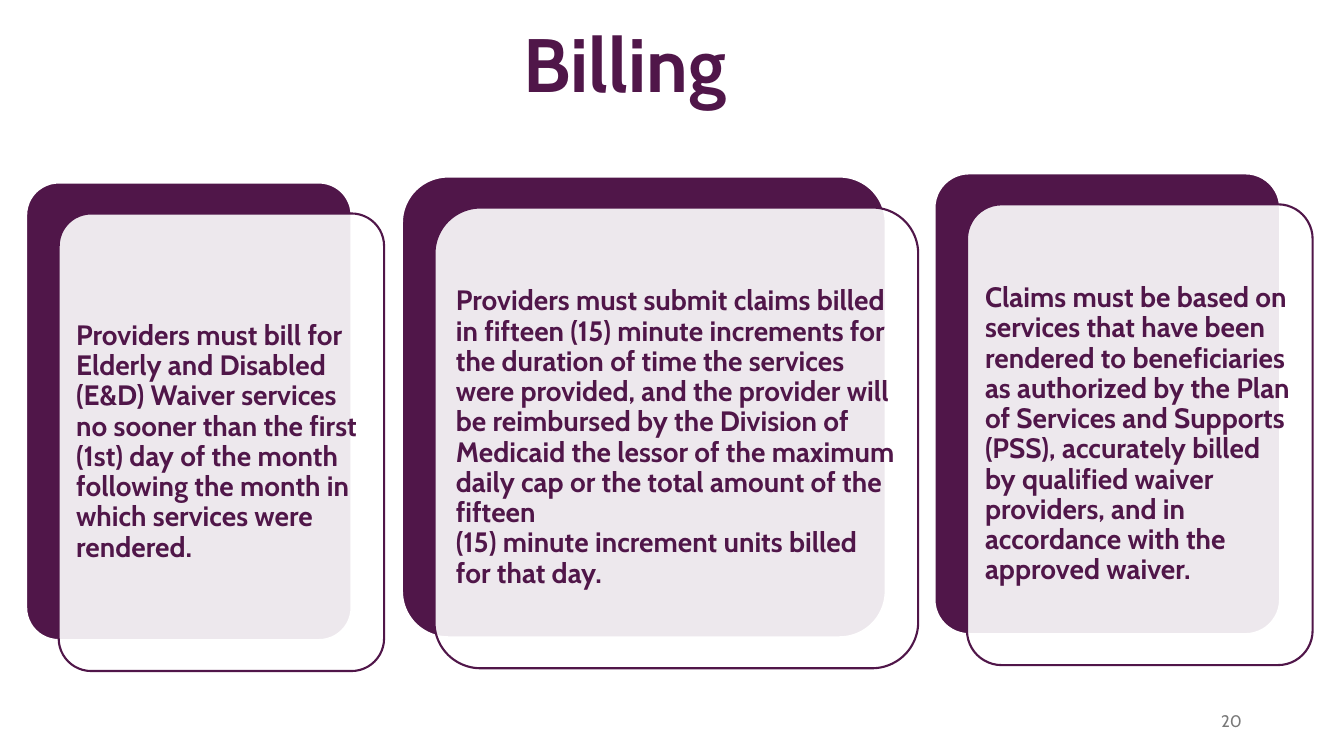
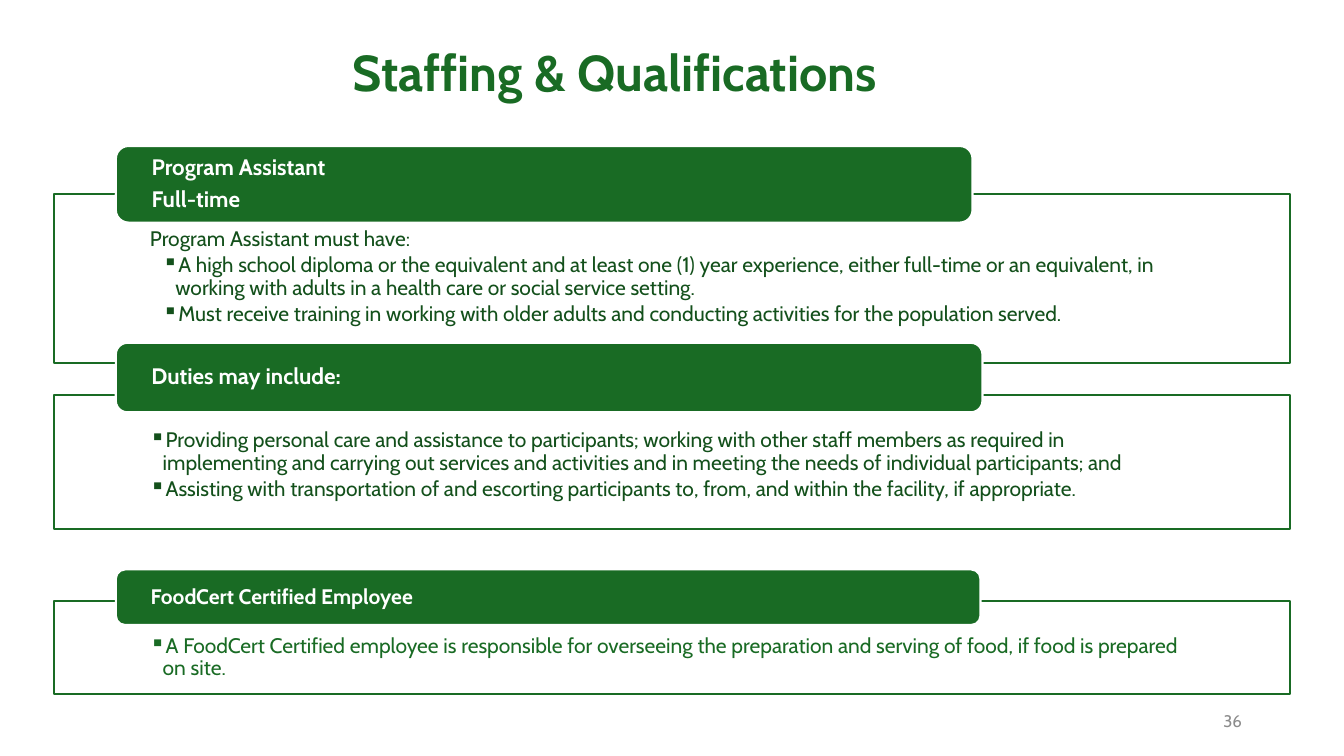
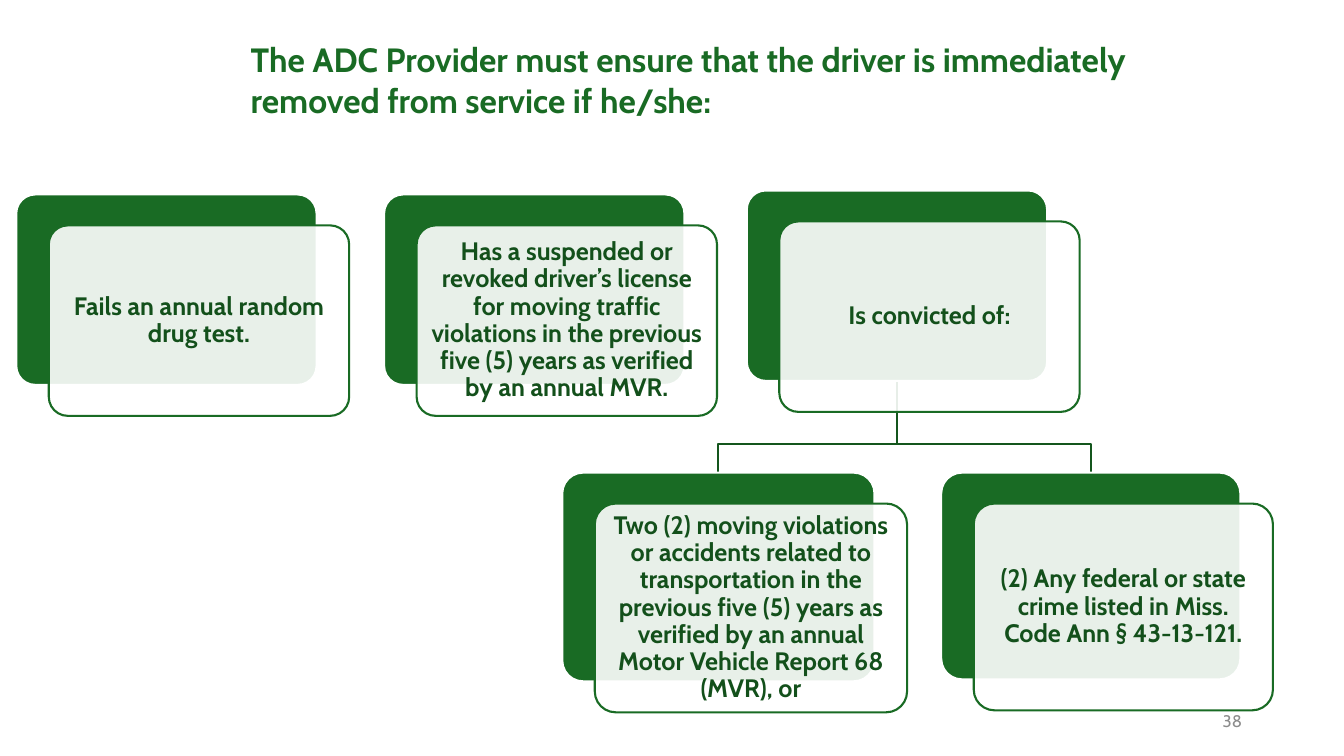
from dataclasses import dataclass

from lxml import etree
from pptx import Presentation
from pptx.dml.color import RGBColor
from pptx.enum.shapes import MSO_SHAPE
from pptx.enum.text import MSO_ANCHOR, PP_ALIGN
from pptx.oxml.ns import qn
from pptx.shapes.autoshape import Shape
from pptx.slide import Slide
from pptx.text.text import TextFrame
from pptx.util import Cm, Pt

RECT, ROUND = MSO_SHAPE.RECTANGLE, MSO_SHAPE.ROUNDED_RECTANGLE
TOP, MID = MSO_ANCHOR.TOP, MSO_ANCHOR.MIDDLE
LEFT, MIDST, RIGHT = PP_ALIGN.LEFT, PP_ALIGN.CENTER, PP_ALIGN.RIGHT


# Theme: colours, type and measures in centimetres
@dataclass(frozen=True)
class Theme:
    face: str = "Cabin"
    white: str = "FFFFFF"
    plum: str = "501649"
    green: str = "196B24"
    dark: str = "13501B"
    wire: str = "14561D"
    ash: str = "797979"
    grey: str = "8C8C8C"
    huge: int = 54
    head: int = 36
    lead: int = 24
    large: int = 20
    card: int = 18
    band: int = 16
    body: int = 15
    foot: int = 12
    line: float = 1.5
    clear: int = 90


T = Theme()


@dataclass(frozen=True)
class Box:
    x: float
    y: float
    w: float
    h: float


@dataclass(frozen=True)
class Type:
    size: int
    ink: str
    bold: bool = False
    align: PP_ALIGN = LEFT
    space: float = 1.0
    after: float = 0.0  # share of the type size


@dataclass(frozen=True)
class Card:
    box: Box
    text: str


@dataclass(frozen=True)
class Item:
    text: str
    level: int = 1
    mark: bool = True


@dataclass(frozen=True)
class Panel:
    box: Box
    tab: Box
    label: str
    size: int
    ink: str
    items: tuple[Item, ...]


# Text helpers
def write(frame: TextFrame, text: str, kind: Type, anchor: MSO_ANCHOR,
          pad: tuple[float, float, float, float]) -> None:
    frame.word_wrap = True
    frame.vertical_anchor = anchor
    (frame.margin_left, frame.margin_top,
     frame.margin_right, frame.margin_bottom) = (Cm(v) for v in pad)
    frame.text = text
    for para in frame.paragraphs:
        para.alignment = kind.align
        para.line_spacing = kind.space
        para.space_after = Pt(kind.size * kind.after)
        for run in para.runs:
            font = run.font
            font.name, font.size, font.bold = T.face, Pt(kind.size), kind.bold
            font.color.rgb = RGBColor.from_string(kind.ink)


def label(slide: Slide, box: Box, text: str, kind: Type,
          anchor: MSO_ANCHOR = TOP) -> None:
    area = slide.shapes.add_textbox(Cm(box.x), Cm(box.y), Cm(box.w), Cm(box.h))
    write(area.text_frame, text, kind, anchor, (0.25, 0.13, 0.25, 0.13))


def indent(frame: TextFrame, items: tuple[Item, ...]) -> None:
    for para, item in zip(frame.paragraphs, items):
        para.level = item.level
        props = para._p.get_or_add_pPr()
        props.set("marL", str(Cm(0.32 * item.level)))
        props.set("indent", str(-Cm(0.32)))
        if item.mark:
            etree.SubElement(props, qn("a:buChar"), char="▪")
        else:
            etree.SubElement(props, qn("a:buNone"))


# Shape helpers
def block(slide: Slide, form: MSO_SHAPE, box: Box, fill: str, line: str,
          clear: int = 100) -> Shape:
    shape = slide.shapes.add_shape(form, Cm(box.x), Cm(box.y), Cm(box.w), Cm(box.h))
    shape.shadow.inherit = False
    shape.fill.solid()
    shape.fill.fore_color.rgb = RGBColor.from_string(fill)
    if clear < 100:
        tint = shape._element.spPr.find(qn("a:solidFill"))[0]
        etree.SubElement(tint, qn("a:alpha"), val=str(clear * 1000))
    shape.line.color.rgb = RGBColor.from_string(line)
    shape.line.width = Pt(T.line)
    return shape


def draw_card(slide: Slide, card: Card, tone: str, kind: Type) -> None:
    box = card.box
    front = Box(box.x + 0.82, box.y + 0.78, box.w, box.h)
    back = block(slide, ROUND, box, tone, T.white)
    face = block(slide, ROUND, front, T.white, tone, T.clear)
    for shape in (back, face):
        shape.adjustments[0] = 0.1
    write(face.text_frame, card.text, kind, MID, (0.2,) * 4)


def draw_panel(slide: Slide, panel: Panel) -> None:
    frame = block(slide, RECT, panel.box, T.white, T.green, T.clear).text_frame
    text = "\n".join(item.text for item in panel.items)
    write(frame, text, Type(T.body, panel.ink, space=0.9, after=0.15),
          TOP, (2.41, 0.86, 2.41, 0.3))
    indent(frame, panel.items)
    tab = block(slide, ROUND, panel.tab, T.green, T.white)
    write(tab.text_frame, panel.label,
          Type(panel.size, T.white, True, space=0.9, after=0.35),
          MID, (0.81, 0, 0.81, 0))


def draw_link(slide: Slide, top: Box, low: Box) -> None:
    x, end, bend = top.x + top.w / 2, low.x + low.w / 2, low.y - 0.71
    pen = slide.shapes.build_freeform(Cm(x), Cm(top.y + top.h))
    pen.add_line_segments(
        [(Cm(x), Cm(bend)), (Cm(end), Cm(bend)), (Cm(end), Cm(low.y))], close=False)
    wire = pen.convert_to_shape()
    wire.shadow.inherit = False
    wire.fill.background()
    wire.line.color.rgb = RGBColor.from_string(T.wire)
    wire.line.width = Pt(T.line)


def add_page(deck: Presentation, number: str, ink: str) -> Slide:
    slide = deck.slides.add_slide(deck.slide_layouts[6])
    label(slide, Box(23.93, 17.65, 7.62, 1.02), number,
          Type(T.foot, ink, align=RIGHT), MID)
    return slide


# Content
BILLS = (
    Card(Box(0.66, 4.6, 8.2, 11.53),
         "Providers must bill for Elderly and Disabled (E&D) Waiver services no sooner "
         "than the first (1st) day of the month following the month in which services "
         "were rendered."),
    Card(Box(10.13, 4.45, 12.19, 11.61),
         "Providers must submit claims billed in fifteen (15) minute increments for the "
         "duration of time the services were provided, and the provider will be "
         "reimbursed by the Division of Medicaid the lessor of the maximum daily cap or "
         "the total amount of the fifteen\v(15) minute increment units billed for that "
         "day."),
    Card(Box(23.55, 4.37, 8.71, 11.61),
         "Claims must be based on services that have been rendered to beneficiaries as "
         "authorized by the Plan of Services and Supports (PSS), accurately billed by "
         "qualified waiver providers, and in accordance with the approved waiver."),
)

STAFF = (
    Panel(Box(1.37, 4.9, 31.14, 4.24), Box(2.92, 3.68, 21.59, 1.93),
          "Program Assistant\nFull-time", T.band, T.dark, (
              Item("Program Assistant must have:", mark=False),
              Item("A high school diploma or the equivalent and at least one (1) year "
                   "experience, either full-time or an equivalent, in working with "
                   "adults in a health care or social service setting.", 2),
              Item("Must receive training in working with older adults and conducting "
                   "activities for the population served.", 2))),
    Panel(Box(1.37, 9.96, 31.14, 3.38), Box(2.92, 8.64, 21.84, 1.75),
          "Duties may include:", T.band, T.dark, (
              Item("Providing personal care and assistance to participants; working "
                   "with other staff members as required in implementing and carrying "
                   "out services and activities and in meeting the needs of individual "
                   "participants; and"),
              Item("Assisting with transportation of and escorting participants to, "
                   "from, and within the facility, if appropriate."))),
    Panel(Box(1.37, 15.14, 31.14, 2.36), Box(2.92, 14.35, 21.79, 1.4),
          "FoodCert Certified Employee", T.body, T.green, (
              Item("A FoodCert Certified employee is responsible for overseeing the "
                   "preparation and serving of food, if food is prepared on site."),)),
)

CAUSES = (
    Card(Box(0.41, 4.9, 7.57, 4.8), "Fails an annual random drug test."),
    Card(Box(9.68, 4.9, 7.57, 4.8),
         "Has a suspended or revoked driver’s license for moving traffic violations in "
         "the previous five (5) years as verified by an annual MVR."),
    Card(Box(18.82, 4.8, 7.57, 4.8), "Is convicted of:"),
)

CRIMES = (
    Card(Box(14.17, 11.91, 7.87, 5.26),
         "Two (2) moving violations or accidents related to transportation in the "
         "previous five (5) years as verified by an annual Motor Vehicle Report 68 "
         "(MVR), or"),
    Card(Box(23.72, 11.91, 7.54, 5.21),
         "(2) Any federal or state crime listed in Miss. Code Ann § 43-13-121."),
)


# Slides
def billing(deck: Presentation) -> None:
    slide = add_page(deck, "20", T.ash)
    label(slide, Box(12.95, 0.3, 5.8, 2.57), "Billing", Type(T.huge, T.plum, True))
    for card in BILLS:
        draw_card(slide, card, T.plum,
                  Type(T.large, T.plum, True, space=0.9, after=0.35))


def staffing(deck: Presentation) -> None:
    slide = add_page(deck, "36", T.grey)
    label(slide, Box(8.64, 0.64, 14.94, 2.51), "Staffing & Qualifications",
          Type(T.head, T.green, True, space=0.9, after=0.17), MID)
    for panel in STAFF:
        draw_panel(slide, panel)


def removal(deck: Presentation) -> None:
    slide = add_page(deck, "38", T.grey)
    label(slide, Box(6.07, 0.86, 24.99, 2.31),
          "The ADC Provider must ensure that the driver is immediately removed from "
          "service if he/she:", Type(T.lead, T.green, True))
    for crime in reversed(CRIMES):
        draw_link(slide, CAUSES[-1].box, crime.box)
    for card in CAUSES + CRIMES:
        draw_card(slide, card, T.green,
                  Type(T.card, T.dark, True, MIDST, 0.9, 0.35))


def main() -> None:
    deck = Presentation()
    deck.slide_width, deck.slide_height = Cm(33.87), Cm(19.05)
    for build in (billing, staffing, removal):
        build(deck)
    deck.save("out.pptx")


if __name__ == "__main__":
    main()
